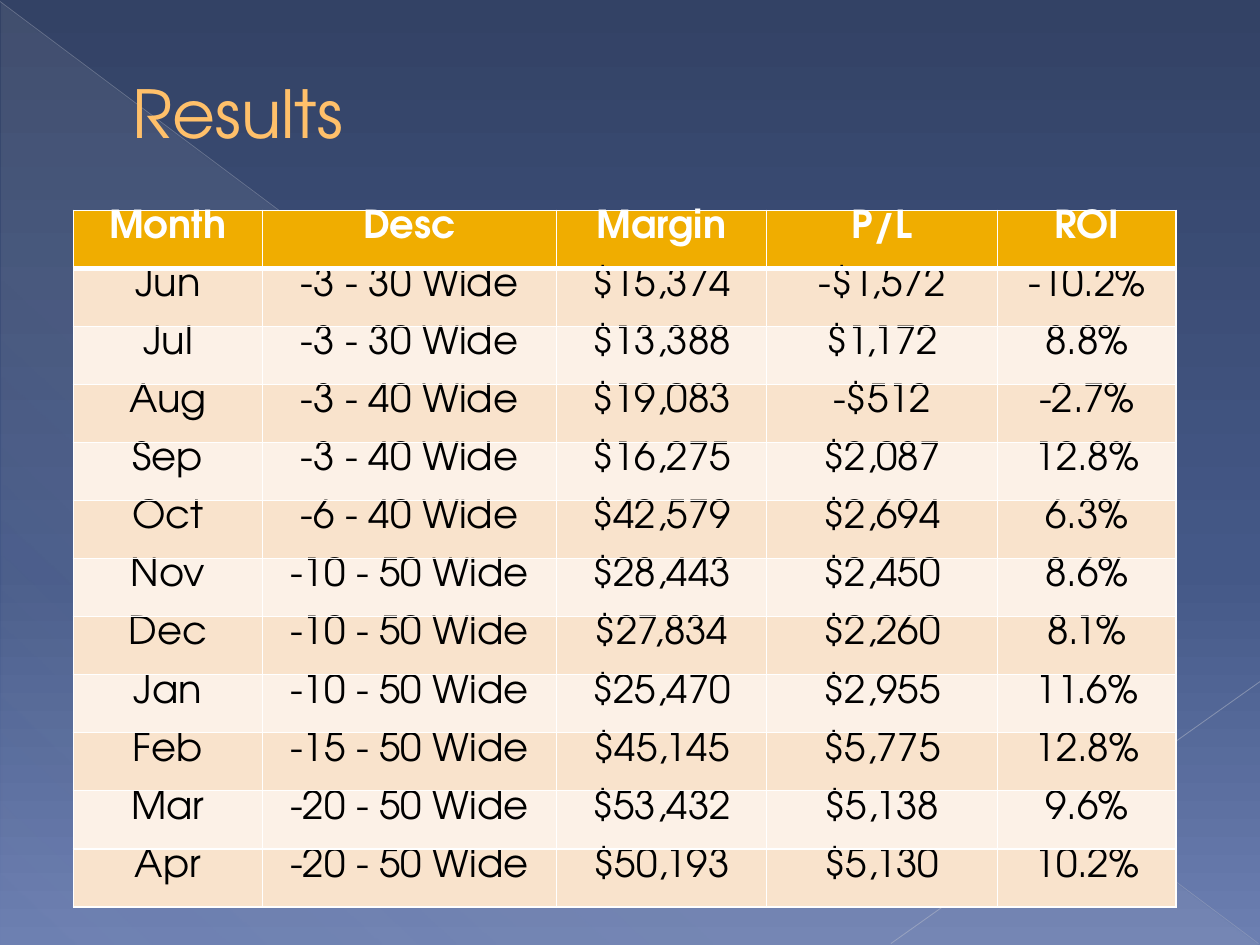
import pptx
import pptx.dml.color
import pptx.enum.shapes
import pptx.enum.text
import pptx.oxml
import pptx.oxml.ns
import pptx.util
from pptx.dml.color import RGBColor
from pptx.util import Cm, Pt

HEADINGS = ["Month", "Desc", "Margin", "P/L", "ROI"]
RESULTS = [
    ("Jun", "-3 - 30 Wide", "$15,374", "-$1,572", "-10.2%"),
    ("Jul", "-3 - 30 Wide", "$13,388", "$1,172", "8.8%"),
    ("Aug", "-3 - 40 Wide", "$19,083", "-$512", "-2.7%"),
    ("Sep", "-3 - 40 Wide", "$16,275", "$2,087", "12.8%"),
    ("Oct", "-6 - 40 Wide", "$42,579", "$2,694", "6.3%"),
    ("Nov", "-10 - 50 Wide", "$28,443", "$2,450", "8.6%"),
    ("Dec", "-10 - 50 Wide", "$27,834", "$2,260", "8.1%"),
    ("Jan", "-10 - 50 Wide", "$25,470", "$2,955", "11.6%"),
    ("Feb", "-15 - 50 Wide", "$45,145", "$5,775", "12.8%"),
    ("Mar", "-20 - 50 Wide", "$53,432", "$5,138", "9.6%"),
    ("Apr", "-20 - 50 Wide", "$50,193", "$5,130", "10.2%"),
]
COLUMN_WIDTHS = [3.81, 5.93, 4.23, 4.66, 3.6]
ROW_HEIGHT = 1.17

FONT = "TeX Gyre Adventor"
WHITE = RGBColor(0xFF, 0xFF, 0xFF)
BLACK = RGBColor(0, 0, 0)
GOLD = RGBColor(0xF0, 0xAD, 0x00)
BANDS = [RGBColor(0xF9, 0xE3, 0xCC), RGBColor(0xFC, 0xF1, 0xE7)]
TITLE_COLOR = RGBColor(0xFF, 0xC0, 0x6A)
TITLE_OUTLINE = RGBColor(0xA6, 0x78, 0x00)
SHEEN = RGBColor(0xD4, 0xD4, 0xD6)

# Gradient stops: position %, colour, opacity %
SKY = [(0, RGBColor(0x33, 0x42, 0x65), 100),
       (60, RGBColor(0x44, 0x58, 0x87), 100),
       (100, RGBColor(0x6C, 0x7F, 0xB1), 100)]
SHEEN_STOPS = [(0, SHEEN, 10), (70, SHEEN, 8), (100, SHEEN, 1)]

# Start, end (cm), colour, width (pt), opacity %
DIAGONALS = [
    ((0, 0.03), (25.37, 19.02), RGBColor(0xB9, 0xBD, 0xC8), 0.39, 35),
    ((25.4, 13.74), (17.96, 19.02), RGBColor(0xC1, 0xC4, 0xCE), 0.47, 45),
]


def xml(markup):
    head, separator, rest = markup.partition(">")
    slash = "/" if head.endswith("/") else ""
    head = head.rstrip("/")
    return pptx.oxml.parse_xml(f"{head} {pptx.oxml.ns.nsdecls('a')}{slash}{separator}{rest}")


def color_markup(color, opacity=100):
    return f'<a:srgbClr val="{color}"><a:alpha val="{opacity * 1000}"/></a:srgbClr>'


def set_gradient(fill, owner, stops, angle):
    """Fill with any number of stops; the angle runs clockwise from left to right."""
    fill.gradient()
    gradient = owner.xpath(".//a:gradFill")[0]
    markup = "".join(f'<a:gs pos="{position * 1000}">{color_markup(color, opacity)}</a:gs>'
                     for position, color, opacity in stops)
    gradient.getparent().replace(gradient, xml(
        f'<a:gradFill rotWithShape="1"><a:gsLst>{markup}</a:gsLst>'
        f'<a:lin ang="{angle * 60000}" scaled="0"/></a:gradFill>'))


def set_text(text_frame, text, *, size, color, bold=False, align=None, outline=None, indent=None):
    paragraph = text_frame.paragraphs[0]
    paragraph.alignment = align
    if indent is not None:
        properties = paragraph._p.get_or_add_pPr()
        properties.set("marL", str(indent))
        properties.set("indent", "0")
    run = paragraph.add_run()
    run.text = text
    run.font.name = FONT
    run.font.size = Pt(size)
    run.font.bold = bold
    run.font.color.rgb = color
    if outline is not None:
        run.font._element.insert(0, xml(
            f'<a:ln w="{Pt(0.5)}"><a:solidFill>{color_markup(outline)}</a:solidFill></a:ln>'))


def set_borders(cell, bottom=1, top=1):
    properties = cell._tc.get_or_add_tcPr()
    sides = [("lnL", 1), ("lnR", 1), ("lnT", top), ("lnB", bottom)]
    for index, (side, width) in enumerate(sides):
        properties.insert(index, xml(
            f'<a:{side} w="{Pt(width)}"><a:solidFill>{color_markup(WHITE)}</a:solidFill></a:{side}>'))


def add_backdrop(slide):
    set_gradient(slide.background.fill, slide.element, SKY, 90)
    triangle = slide.shapes.add_shape(
        pptx.enum.shapes.MSO_SHAPE.RIGHT_TRIANGLE, Cm(0.03), Cm(0.05), Cm(25.35), Cm(19))
    triangle.shadow.inherit = False
    triangle.line.fill.background()
    set_gradient(triangle.fill, triangle.element, SHEEN_STOPS, 133)
    for start, end, color, width, opacity in DIAGONALS:
        line = slide.shapes.add_connector(
            pptx.enum.shapes.MSO_CONNECTOR.STRAIGHT, *map(Cm, start + end))
        line.line.width = Pt(width)
        line.line.color.rgb = color
        line.element.xpath(".//a:ln//a:srgbClr")[0].append(
            xml(f'<a:alpha val="{opacity * 1000}"/>'))
        line.element.spPr.append(xml("<a:effectLst/>"))


def add_title(slide):
    title = slide.shapes.title
    title.left, title.top, title.width, title.height = Cm(1.07), Cm(1.27), Cm(22.86), Cm(1.98)
    title.text_frame.vertical_anchor = pptx.enum.text.MSO_ANCHOR.MIDDLE
    set_text(title.text_frame, "Results", size=37.8, color=TITLE_COLOR,
             align=pptx.enum.text.PP_ALIGN.LEFT, outline=TITLE_OUTLINE, indent=Cm(1.35))
    title.element.getparent().append(title.element)  # in front of the backdrop


def add_results_table(slide):
    rows = [HEADINGS, *RESULTS]
    table = slide.shapes.add_table(
        len(rows), len(HEADINGS), Cm(1.48), Cm(4.24),
        Cm(sum(COLUMN_WIDTHS)), Cm(ROW_HEIGHT * len(rows))).table
    table.horz_banding = False
    for column, width in zip(table.columns, COLUMN_WIDTHS):
        column.width = Cm(width)
    for row_index, values in enumerate(rows):
        table.rows[row_index].height = Cm(ROW_HEIGHT)
        header = row_index == 0
        for column_index, value in enumerate(values):
            cell = table.cell(row_index, column_index)
            cell.margin_top = cell.margin_bottom = 0
            cell.fill.solid()
            cell.fill.fore_color.rgb = GOLD if header else BANDS[(row_index - 1) % 2]
            set_borders(cell, bottom=3 if header else 1, top=3 if row_index == 1 else 1)
            set_text(cell.text_frame, value, size=22, bold=header,
                     color=WHITE if header else BLACK,
                     align=pptx.enum.text.PP_ALIGN.CENTER)


def main():
    presentation = pptx.Presentation()
    presentation.slide_width, presentation.slide_height = Cm(25.4), Cm(19.05)
    slide = presentation.slides.add_slide(presentation.slide_layouts[5])
    add_backdrop(slide)
    add_title(slide)
    add_results_table(slide)
    presentation.save("out.pptx")


if __name__ == "__main__":
    main()
